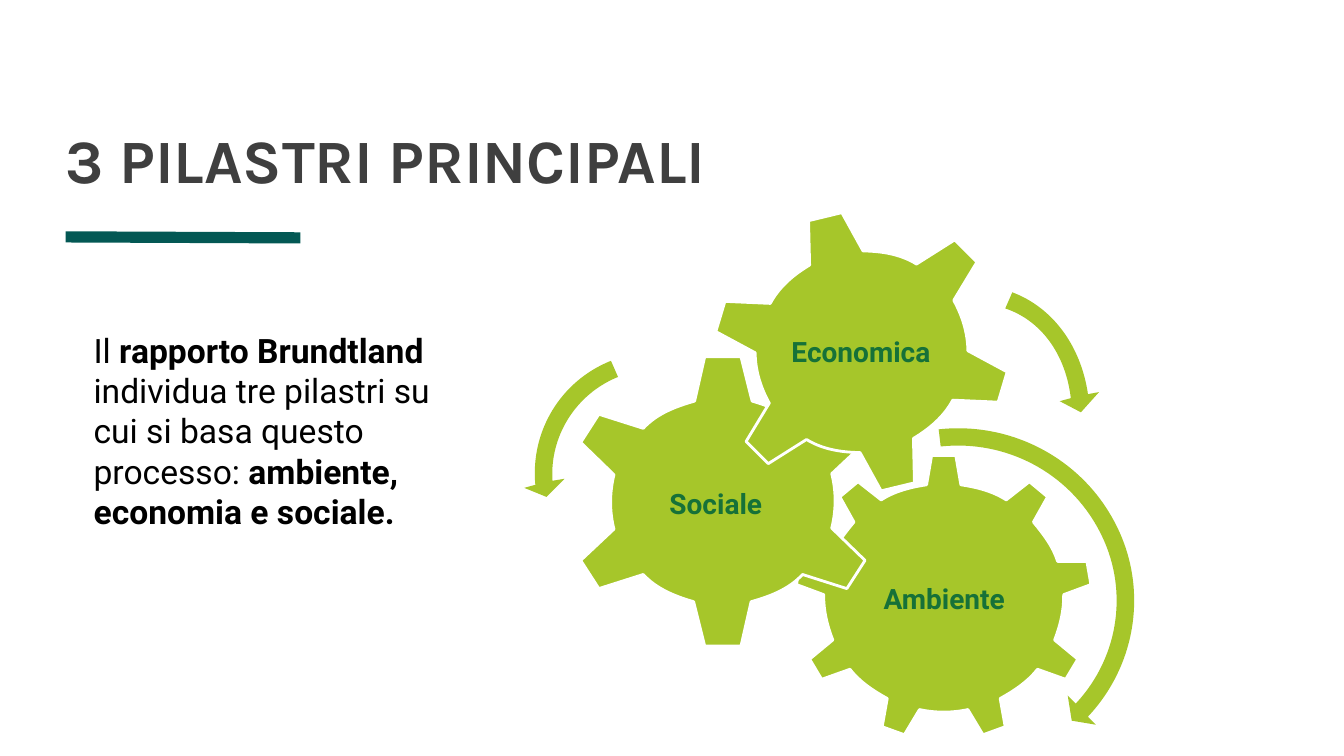
import math
from dataclasses import dataclass

import lxml.etree
import pptx
import pptx.dml.color
import pptx.enum.shapes
import pptx.enum.text
import pptx.oxml
import pptx.oxml.ns
import pptx.util

PX = 9144  # 100 px to the inch
SLIDE = (1333, 750)
TITLE = ("3 PILASTRI PRINCIPALI", (65, 22, 1200, 172))
RULE = ((65, 235), (298, 236))
BODY_BOX = (83, 322, 399, 212)
BODY = [
    ("Il ", False),
    ("rapporto Brundtland ", True),
    ("individua tre pilastri su cui si basa questo processo: ", False),
    ("ambiente, economia e sociale.", True),
]

# Each tooth is base, tip, tip, base, clockwise; symmetry supplies the others.
GEARS = [
    {"label": "Ambiente", "box": (848, 523, 177, 146), "center": (936, 592),
     "frame": (788, 451, 295, 284), "rotation": 0, "symmetry": "mirror", "teeth": [
         [(919, 481), (924, 452), (948, 452), (953, 481)],
         [(998, 496), (1021, 478), (1039, 493), (1025, 518)],
         [(1049, 557), (1078, 557), (1082, 580), (1055, 590)],
         [(1046, 635), (1069, 654), (1057, 674), (1029, 664)],
         [(992, 693), (997, 721), (975, 729), (960, 704)]]},
    {"label": "Sociale", "box": (631, 429, 158, 145), "center": (717, 497.5),
     "frame": (560, 351, 313, 294), "rotation": 0, "symmetry": "half turn", "teeth": [
         [(689, 398), (699, 354), (735, 354), (746, 398)],
         [(796, 425), (840, 411), (858, 439), (825, 470)],
         [(825, 524), (858, 556), (840, 584), (796, 570)]]},
    {"label": "Economica", "box": (771, 271, 166, 160), "center": (854.5, 349),
     "frame": (706, 207, 298, 284), "rotation": 345, "symmetry": "half turn", "teeth": [
         [(909, 262), (947, 238), (969, 260), (946, 298)],
         [(960, 348), (999, 369), (990, 399), (945, 397)],
         [(906, 435), (907, 479), (874, 487), (853, 449)]]},
]

# Two numbers are a corner; six are a Bezier curve.
ARROWS = [
    {"frame": (765, 414, 371, 364), "rotation": 0, "outline": [
        (931, 426), (1003, 418, 1073, 455, 1106, 519),
        (1139, 582, 1128, 659, 1079, 711),
        (1087, 719), (1063, 715), (1059, 690), (1067, 698),
        (1111, 651, 1120, 582, 1090, 526), (1060, 469, 998, 436, 933, 443)]},
    {"frame": (519, 337, 270, 264), "rotation": 0, "outline": [
        (606, 358), (613, 374), (571, 391, 545, 433, 548, 477), (560, 475),
        (542, 493), (520, 484), (531, 481), (526, 428, 556, 378, 606, 358)]},
    {"frame": (767, 296, 348, 287), "rotation": 117.8, "outline": [
        (1004, 290), (1044, 305, 1072, 343, 1079, 391), (1090, 389), (1072, 409),
        (1051, 398), (1062, 395), (1057, 352, 1033, 318, 997, 306)]},
]


@dataclass(frozen=True)
class Theme:
    green: str = "A6C62A"
    label: str = "167138"
    teal: str = "035854"
    title: str = "3F3F3F"
    text: str = "000000"
    white: str = "FFFFFF"
    head_font: str = "Karla"
    body_font: str = "Roboto"
    title_size: int = 44
    body_size: int = 24
    label_size: int = 20
    rule_width: int = 8
    gear_line: int = 2


T = Theme()


def rgb(value):
    return pptx.dml.color.RGBColor.from_string(value)


def emu(values):
    return [round(v * PX) for v in values]


def set_all(target, **values):
    for name, value in values.items():
        setattr(target, name, value)


def place(shape, box):
    set_all(shape, **dict(zip(("left", "top", "width", "height"), emu(box))))


def write(shape, runs, font, size, color, inset, spacing=None,
          align=pptx.enum.text.PP_ALIGN.LEFT, anchor=pptx.enum.text.MSO_ANCHOR.TOP):
    """Fill a shape with one paragraph of (text, bold) runs."""
    left, top = emu(inset)
    tf = shape.text_frame
    set_all(tf, word_wrap=True, auto_size=pptx.enum.text.MSO_AUTO_SIZE.NONE,
            vertical_anchor=anchor, margin_left=left, margin_right=left,
            margin_top=top, margin_bottom=top)
    p = tf.paragraphs[0]
    set_all(p, alignment=align, line_spacing=spacing)
    for text, bold in runs:
        r = p.add_run()
        r.text = text
        set_all(r.font, name=font, size=pptx.util.Pt(size), bold=bold)
        r.font.color.rgb = rgb(color)


def arc(start, end, center):
    """One clockwise Bezier curve between two points of a gear's body."""
    (ax, ay), (bx, by) = [(x - center[0], y - center[1]) for x, y in (start, end)]
    sweep = (math.atan2(by, bx) - math.atan2(ay, ax)) % math.tau
    h = 4 / 3 * math.tan(sweep / 4)
    return (start[0] - h * ay, start[1] + h * ax,
            end[0] + h * by, end[1] - h * bx, *end)


def gear_outline(gear):
    cx, cy = gear["center"]
    teeth = list(gear["teeth"])
    if gear["symmetry"] == "mirror":
        teeth += [[(2 * cx - x, y) for x, y in reversed(tooth)]
                  for tooth in reversed(teeth[1:])]
    else:
        teeth += [[(2 * cx - x, 2 * cy - y) for x, y in tooth] for tooth in teeth]
    outline = [teeth[0][0]]
    for tooth, following in zip(teeth, teeth[1:] + teeth[:1]):
        outline += tooth[1:]
        outline.append(arc(tooth[-1], following[0], (cx, cy)))
    return outline


def add_outline(shapes, outline, frame, rotation):
    """Draw an outline of corners and curves inside its rotated frame."""
    left, top, width, height = frame
    cos, sin = math.cos(math.radians(rotation)), math.sin(math.radians(rotation))

    def local(x, y):
        dx, dy = x - left - width / 2, y - top - height / 2
        return emu((dx * cos + dy * sin + width / 2, dy * cos - dx * sin + height / 2))

    segments = [[local(*seg[i:i + 2]) for i in range(0, len(seg), 2)]
                for seg in outline]
    fb = shapes.build_freeform(*segments[0][-1])
    fb.add_line_segments([seg[-1] for seg in segments[1:]], close=True)
    sp = fb.convert_to_shape()
    place(sp, frame)
    sp.rotation = rotation
    qn = pptx.oxml.ns.qn
    geometry = next(sp._element.iter(qn("a:path")))
    geometry.set("w", str(sp.width))
    geometry.set("h", str(sp.height))
    for node, points in zip(list(geometry), segments):
        if len(points) == 3:
            node_curve = lxml.etree.Element(qn("a:cubicBezTo"))
            geometry.replace(node, node_curve)
            node = node_curve
        for child in list(node):
            node.remove(child)
        for x, y in points:
            lxml.etree.SubElement(node, qn("a:pt"), x=str(x), y=str(y))
    sp.shadow.inherit = False
    sp.fill.solid()
    sp.fill.fore_color.rgb = rgb(T.green)
    sp.line.fill.background()
    return sp


def main():
    prs = pptx.Presentation()
    prs.slide_width, prs.slide_height = emu(SLIDE)
    s = prs.slides.add_slide(prs.slide_layouts[5])

    text, box = TITLE
    title = s.shapes.title
    place(title, box)
    write(title, [(text, True)], T.head_font, T.title_size, T.title, (0, 0),
          spacing=0.8, anchor=pptx.enum.text.MSO_ANCHOR.BOTTOM)

    rule = s.shapes.add_connector(
        pptx.enum.shapes.MSO_CONNECTOR.STRAIGHT, *emu(RULE[0]), *emu(RULE[1]))
    rule.line.color.rgb = rgb(T.teal)
    rule.line.width = pptx.util.Pt(T.rule_width)
    rule._element.spPr.append(pptx.oxml.parse_xml(
        f"<a:effectLst {pptx.oxml.ns.nsdecls('a')}/>"))

    diagram = s.shapes.add_group_shape().shapes
    for gear in GEARS:
        sp = add_outline(diagram, gear_outline(gear), gear["frame"], gear["rotation"])
        sp.line.color.rgb = rgb(T.white)
        sp.line.width = pptx.util.Pt(T.gear_line)
        write(diagram.add_textbox(*emu(gear["box"])), [(gear["label"], True)],
              T.body_font, T.label_size, T.label, (3, 3), spacing=0.9,
              align=pptx.enum.text.PP_ALIGN.CENTER,
              anchor=pptx.enum.text.MSO_ANCHOR.MIDDLE)
    for arrow in ARROWS:
        add_outline(diagram, **arrow)

    write(s.shapes.add_textbox(*emu(BODY_BOX)), BODY,
          T.body_font, T.body_size, T.text, (10, 5))
    prs.save("out.pptx")


if __name__ == "__main__":
    main()
